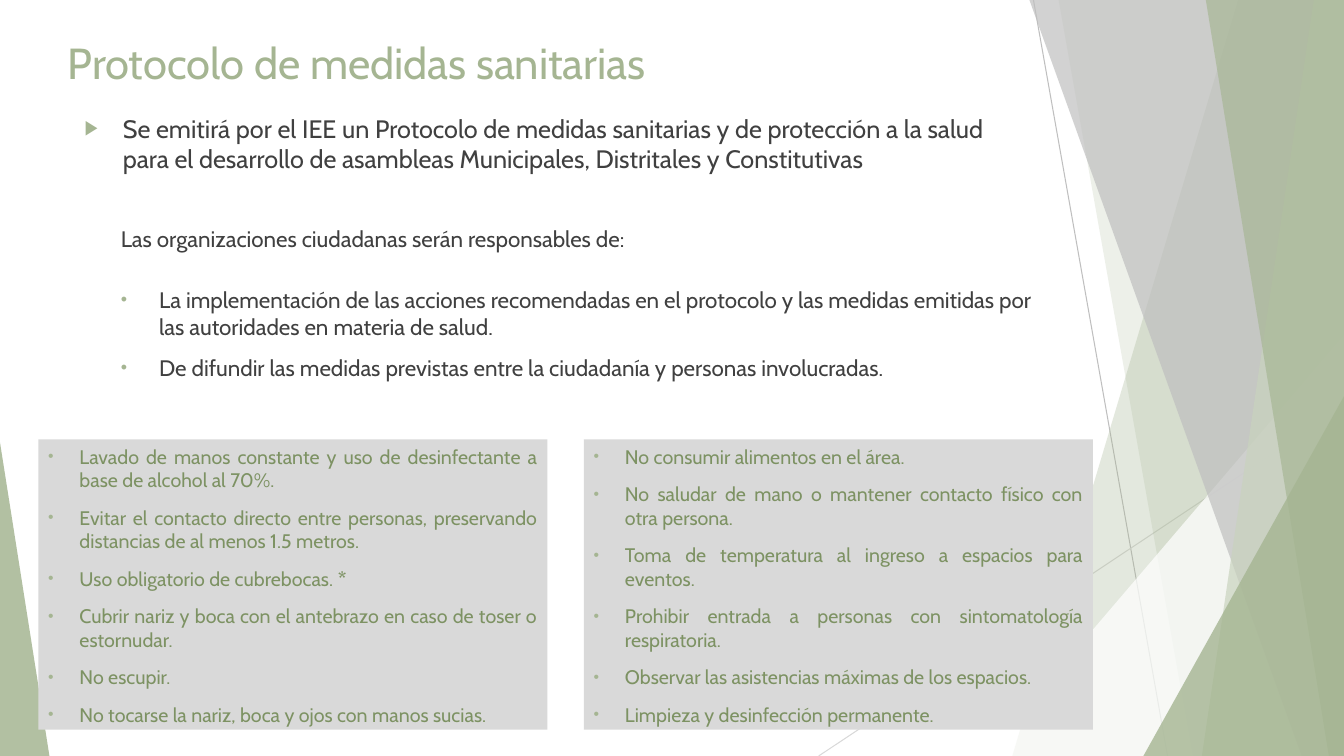
"""Build the slide on the health measures protocol."""
from dataclasses import dataclass

from lxml import etree
from pptx import Presentation
from pptx.dml.color import RGBColor
from pptx.enum.shapes import MSO_CONNECTOR, MSO_SHAPE
from pptx.enum.text import MSO_ANCHOR, MSO_AUTO_SIZE, PP_ALIGN
from pptx.oxml.ns import qn
from pptx.util import Inches, Pt

STRAIGHT = MSO_CONNECTOR.STRAIGHT
RECTANGLE, TRIANGLE = MSO_SHAPE.RECTANGLE, MSO_SHAPE.ISOSCELES_TRIANGLE
TOP, MIDDLE = MSO_ANCHOR.TOP, MSO_ANCHOR.MIDDLE
LEFT, JUSTIFY = PP_ALIGN.LEFT, PP_ALIGN.JUSTIFY
NO_AUTOFIT = MSO_AUTO_SIZE.NONE


@dataclass(frozen=True)
class Theme:
    font: str = "Cabin"
    green: str = "A5B592"
    pale_green: str = "C9D3BE"
    dark_green: str = "7D9263"
    ink: str = "404040"
    white: str = "FFFFFF"
    grey: str = "BFBFBF"
    light_grey: str = "D9D9D9"
    title: int = 31
    lead: int = 18
    body: int = 16
    measure: int = 14


THEME = Theme()
WIDTH, HEIGHT = 13.33, 7.5

TITLE = "Protocolo de medidas sanitarias"
LEAD = ["Se emitirá por el IEE un Protocolo de medidas sanitarias y de protección a la salud "
        "para el desarrollo de asambleas Municipales, Distritales y Constitutivas"]
DUTIES_INTRO = ["Las organizaciones ciudadanas serán responsables de:"]
DUTIES = [
    "La implementación de las acciones recomendadas en el protocolo y las medidas emitidas por "
    "las autoridades en materia de salud.",
    "De difundir las medidas previstas entre la ciudadanía y personas involucradas.",
]
MEASURES = [
    [
        "Lavado de manos constante y uso de desinfectante a base de alcohol al 70%.",
        "Evitar el contacto directo entre personas, preservando distancias de al menos 1.5 metros.",
        ("Uso obligatorio de cubrebocas. ", "*"),
        "Cubrir nariz y boca con el antebrazo en caso de toser o estornudar.",
        "No escupir.",
        "No tocarse la nariz, boca y ojos con manos sucias.",
    ],
    [
        "No consumir alimentos en el área.",
        "No saludar de mano o mantener contacto físico con otra persona.",
        "Toma de temperatura al ingreso a espacios para eventos.",
        "Prohibir entrada a personas con sintomatología respiratoria.",
        "Observar las asistencias máximas de los espacios.",
        "Limpieza y desinfección permanente.",
    ],
]

RAYS = [((10.25, 0), (11.58, HEIGHT), THEME.grey),
        ((WIDTH, 4.03), (8.12, HEIGHT), THEME.light_grey)]
SHARDS_BEHIND = [(12.28, 10.04, THEME.green, 30), (10.5, 11.83, THEME.green, 20)]
SHARDS_FRONT = [(10.21, 12.91, THEME.grey, 70), (13.03, 11.92, THEME.pale_green, 70),
                (11.96, 13.18, THEME.green, 65)]
PEAK_BEHIND = (9.77, 3.56, 4.17, 1, THEME.white, 72)
PEAKS_FRONT = [(11.34, 1.99, 3.57, 1, THEME.green, 80), (0, 0.49, 3.11, 0, THEME.green, 85)]

TEXT_WIDTH, TEXT_LEFT = 9.4, 1.1
PANEL_LEFT, PANEL_TOP, PANEL_WIDTH, PANEL_HEIGHT, PANEL_GAP = 0.38, 4.36, 5.05, 2.88, 0.36


def paint(shape, color, opacity=100):
    shape.shadow.inherit = False
    shape.line.fill.background()
    shape.fill.solid()
    shape.fill.fore_color.rgb = RGBColor.from_string(color)
    if opacity < 100:
        tint = shape._element.spPr.find(".//" + qn("a:srgbClr"))
        etree.SubElement(tint, qn("a:alpha"), val=str(opacity * 1000))


def add_ray(slide, start, end, color):
    ray = slide.shapes.add_connector(STRAIGHT, *map(Inches, start + end))
    ray.line.color.rgb = RGBColor.from_string(color)
    ray.line.width = Pt(0.75)
    etree.SubElement(ray._element.spPr, qn("a:effectLst"))


def add_shard(slide, top_x, bottom_x, color, opacity):
    outline = slide.shapes.build_freeform(Inches(top_x), 0)
    corners = [(WIDTH, 0), (WIDTH, HEIGHT), (bottom_x, HEIGHT)]
    outline.add_line_segments([(Inches(x), Inches(y)) for x, y in corners], close=True)
    paint(outline.convert_to_shape(), color, opacity)


def add_peak(slide, left, width, height, apex, color, opacity):
    peak = slide.shapes.add_shape(
        TRIANGLE, *map(Inches, (left, HEIGHT - height, width, height)))
    peak.adjustments[0] = apex
    paint(peak, color, opacity)


def add_bullet(paragraph, mark, indent):
    props = paragraph._p.get_or_add_pPr()
    props.set("marL", str(Inches(indent)))
    props.set("indent", str(-Inches(indent)))
    tint = etree.SubElement(props, qn("a:buClr"))
    etree.SubElement(tint, qn("a:srgbClr"), val=THEME.green)
    etree.SubElement(props, qn("a:buSzPct"), val="80000")
    etree.SubElement(props, qn("a:buFont"), typeface="Arial")
    etree.SubElement(props, qn("a:buChar"), char=mark)


def write_text(shape, paragraphs, *, size, color, align=LEFT, anchor=TOP, before=10,
               bullet=None, indent=0.38):
    frame = shape.text_frame
    frame.word_wrap = True
    frame.auto_size = NO_AUTOFIT
    frame.vertical_anchor = anchor
    for index, content in enumerate(paragraphs):
        paragraph = frame.add_paragraph() if index else frame.paragraphs[0]
        paragraph.alignment = align
        paragraph.space_before = Pt(before)
        if bullet:
            add_bullet(paragraph, bullet, indent)
        pieces = (content,) if isinstance(content, str) else content
        for position, piece in enumerate(pieces):
            run = paragraph.add_run()
            run.text = piece
            run.font.name = THEME.font
            run.font.size = Pt(size)
            run.font.bold = position > 0
            run.font.color.rgb = RGBColor.from_string(color)


def add_text(slide, box, paragraphs, **style):
    write_text(slide.shapes.add_textbox(*map(Inches, box)), paragraphs, **style)


def main():
    deck = Presentation()
    deck.slide_width, deck.slide_height = Inches(WIDTH), Inches(HEIGHT)
    slide = deck.slides.add_slide(deck.slide_layouts[5])

    for ray in RAYS:
        add_ray(slide, *ray)
    for shard in SHARDS_BEHIND:
        add_shard(slide, *shard)
    add_peak(slide, *PEAK_BEHIND)
    for shard in SHARDS_FRONT:
        add_shard(slide, *shard)
    for peak in PEAKS_FRONT:
        add_peak(slide, *peak)

    title = slide.shapes.title
    title.left, title.top, title.width, title.height = map(Inches, (0.57, 0.26, 9.71, 0.72))
    write_text(title, [TITLE], size=THEME.title, color=THEME.green, anchor=MIDDLE, before=0)

    add_text(slide, (0.74, 1.07, TEXT_WIDTH, 0.79), LEAD,
             size=THEME.lead, color=THEME.ink, bullet="▶")
    add_text(slide, (TEXT_LEFT, 2.18, TEXT_WIDTH, 0.51), DUTIES_INTRO,
             size=THEME.body, color=THEME.ink)
    add_text(slide, (TEXT_LEFT, 2.79, TEXT_WIDTH, 1.25), DUTIES,
             size=THEME.body, color=THEME.ink, bullet="•")

    for column, measures in enumerate(MEASURES):
        left = PANEL_LEFT + column * (PANEL_WIDTH + PANEL_GAP)
        panel = slide.shapes.add_shape(
            RECTANGLE, *map(Inches, (left, PANEL_TOP, PANEL_WIDTH, PANEL_HEIGHT)))
        paint(panel, THEME.light_grey)
        write_text(panel, measures, size=THEME.measure, color=THEME.dark_green,
                   align=JUSTIFY, bullet="•", indent=0.31)

    deck.save("out.pptx")


if __name__ == "__main__":
    main()
